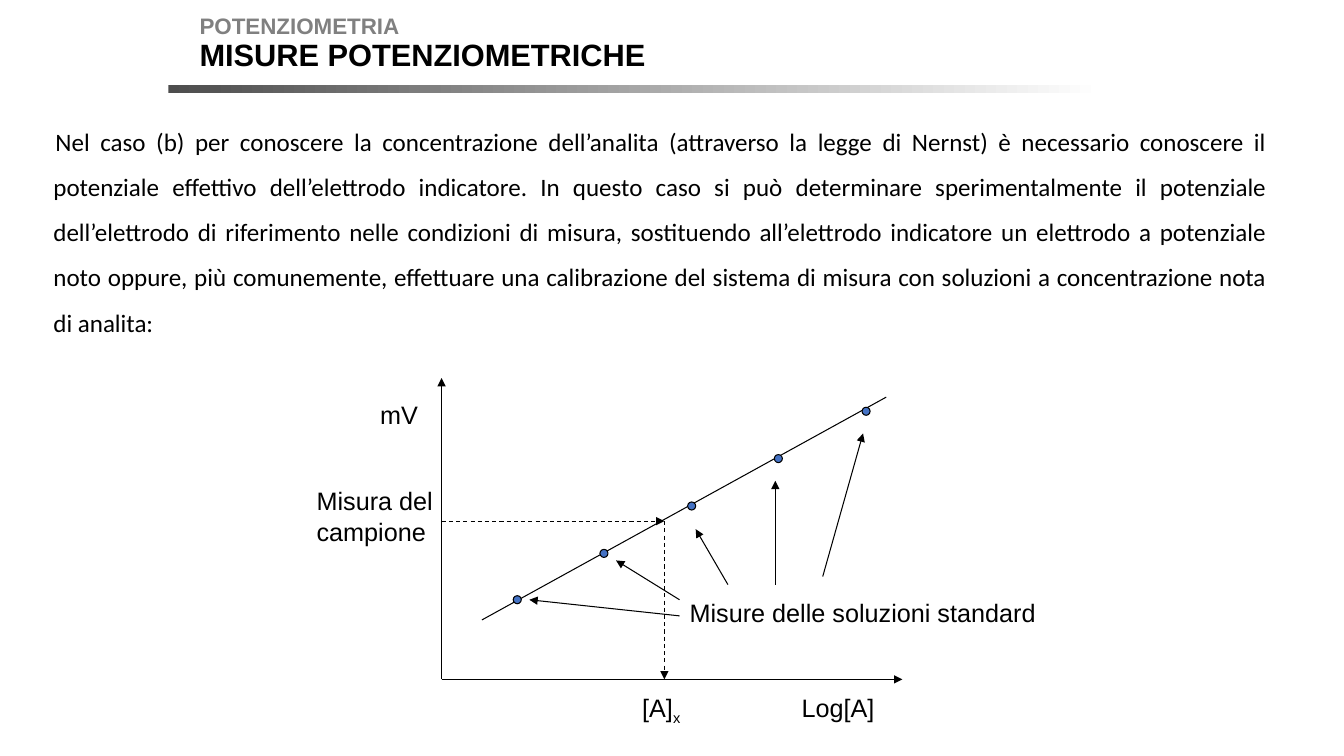
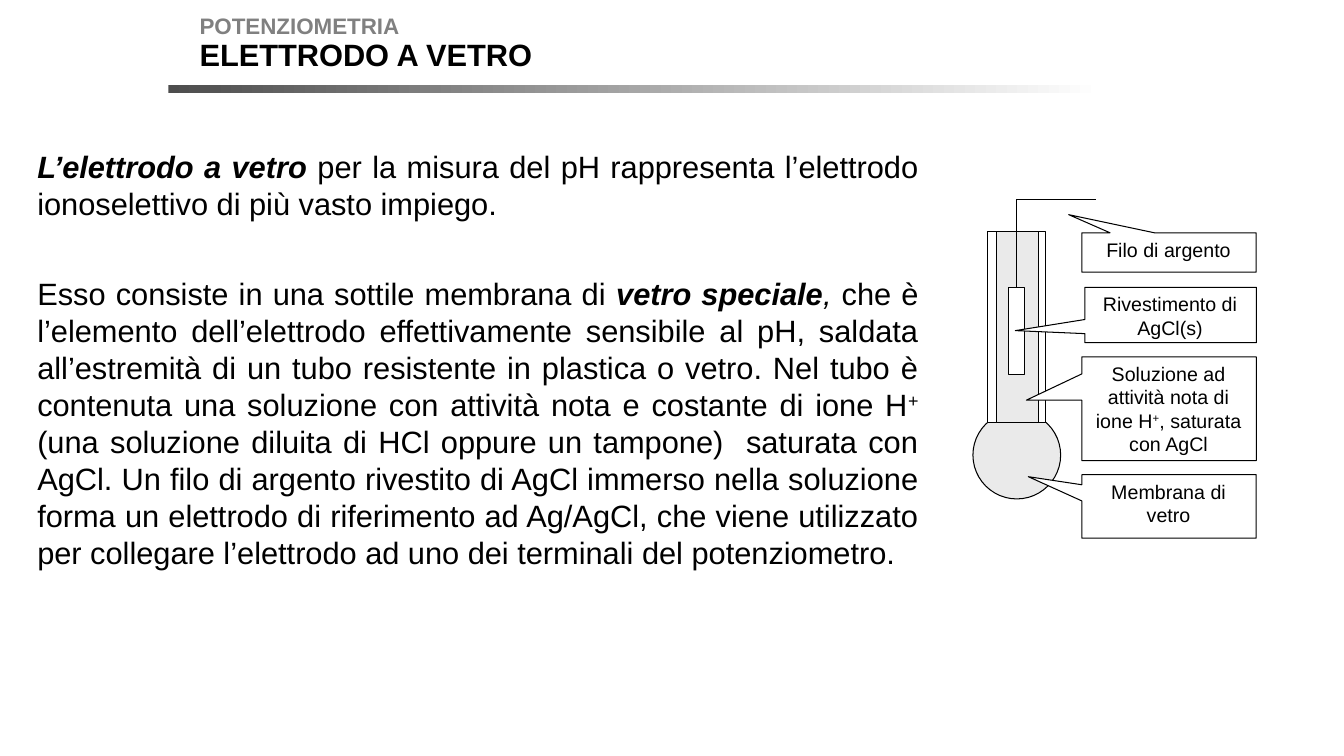
import pptx
import pptx.util
import pptx.dml.color
import pptx.enum.dml
import pptx.enum.shapes
import pptx.enum.text
import pptx.oxml
import pptx.oxml.ns

PX = 9144  # EMU per px, 100 px to the inch
BLACK, WHITE, GREY = "000000", "FFFFFF", "808080"
BAND_DARK, SOLUTION, DOT = "4D4D4D", "EAEAEA", "4472C4"
RECT = pptx.enum.shapes.MSO_SHAPE.RECTANGLE
OVAL = pptx.enum.shapes.MSO_SHAPE.OVAL
ALIGN = pptx.enum.text.PP_ALIGN
BASELINES = {"^": "30000", "_": "-25000"}


def emu(*lengths):
    return [round(n * PX) for n in lengths]


def rgb(value):
    return pptx.dml.color.RGBColor.from_string(value)


def outline(line):
    line.color.rgb = rgb(BLACK)
    line.width = pptx.util.Pt(0.75)


def paint(sp, fill):
    sp.shadow.inherit = False
    sp.fill.solid()
    sp.fill.fore_color.rgb = rgb(fill)
    outline(sp.line)


def shape(s, kind, x, y, w, h, fill):
    sp = s.shapes.add_shape(kind, *emu(x, y, w, h))
    paint(sp, fill)
    return sp


def line(s, x1, y1, x2, y2, arrow=False, dashed=False):
    straight = pptx.enum.shapes.MSO_CONNECTOR.STRAIGHT
    cn = s.shapes.add_connector(straight, *emu(x1, y1, x2, y2))
    outline(cn.line)
    if dashed:
        cn.line.dash_style = pptx.enum.dml.MSO_LINE.DASH
    if arrow:
        ln = cn.line._get_or_add_ln()
        tail = pptx.oxml.parse_xml(
            "<a:tailEnd %s type='triangle'/>" % pptx.oxml.ns.nsdecls("a"))
        ln.append(tail)
    cn._element.spPr.append(pptx.oxml.parse_xml(
        "<a:effectLst %s/>" % pptx.oxml.ns.nsdecls("a")))


def text(s, x, y, w, h, paragraphs, size, color=BLACK, font="Arial",
         align=ALIGN.LEFT, wrap=True):
    """Each paragraph is a list of (words, style); style mixes b, i, ^ and _."""
    tf = s.shapes.add_textbox(*emu(x, y, w, h)).text_frame
    tf.word_wrap = wrap
    tf.margin_left = tf.margin_right = tf.margin_top = tf.margin_bottom = 5 * PX
    for n, runs in enumerate(paragraphs):
        p = tf.add_paragraph() if n else tf.paragraphs[0]
        p.alignment = align
        for words, style in runs:
            r = p.add_run()
            r.text = words
            r.font.name = font
            r.font.size = pptx.util.Pt(size)
            r.font.color.rgb = rgb(color)
            r.font.bold = "b" in style
            r.font.italic = "i" in style
            for mark, baseline in BASELINES.items():
                if mark in style:
                    r._r.get_or_add_rPr().set("baseline", baseline)
    return tf


def label(s, x, y, w, h, *runs):
    text(s, x, y, w, h, [runs], 18, wrap=False)


def header(s, title, width):
    band = shape(s, RECT, 167, 84, 925, 8, BAND_DARK)
    band.line.fill.background()
    band.fill.gradient()
    band.fill.gradient_angle = 0
    for stop, color in zip(band.fill.gradient_stops, (BAND_DARK, WHITE)):
        stop.color.rgb = rgb(color)
        stop.position = 0 if color == BAND_DARK else 1
    text(s, 193, 7, 210, 34, [[("POTENZIOMETRIA", "b")]], 16, GREY, wrap=False)
    text(s, 193, 31, width, 45, [[(title, "b")]], 22, wrap=False)


def calibration_plot(s, x, y):
    """Calibration line with its axes; (x, y) is where the axes cross."""
    line(s, x, y, x + 457, y, arrow=True)
    line(s, x, y, x, y - 299, arrow=True)
    label(s, x - 66, y - 283, 49, 38, ("mV", ""))
    label(s, x + 352, y + 8, 84, 38, ("Log[A]", ""))

    line(s, x + 40, y - 59, x + 441, y - 280)
    for i in range(5):
        shape(s, OVAL, x + 71 + i * 173 // 2, y - 83 - i * 187 // 4, 8, 8, DOT)

    label(s, x + 241, y - 86, 355, 38, ("Misure delle soluzioni standard", ""))
    for x1, y1, x2, y2 in ((236, 63, 87, 79), (236, 79, 173, 118),
                           (284, 94, 252, 149), (331, 94, 331, 197),
                           (378, 102, 418, 244)):
        line(s, x + x1, y - y1, x + x2, y - y2, arrow=True)

    text(s, x - 129, y - 197, 162, 68, [[("Misura del campione", "")]], 18)
    sample_x, sample_y = x + 221, y - 157
    line(s, x, sample_y, sample_x, sample_y, arrow=True, dashed=True)
    line(s, sample_x, sample_y, sample_x, y, arrow=True, dashed=True)
    label(s, x + 194, y + 8, 50, 43, ("[A]", ""), ("x", "_"))


def callout(s, x, y, w, h, tail, runs, on_top=False):
    """Box whose tail, given relative to the box, leaves its left or top edge."""
    points = [(0, 0), (w, 0), (w, h), (0, h)]
    place = 1 if on_top else 4
    points[place:place] = tail
    points = [(x + dx, y + dy) for dx, dy in points]
    builder = s.shapes.build_freeform(*points[0], scale=PX)
    builder.add_line_segments(points[1:], close=True)
    paint(builder.convert_to_shape(), WHITE)
    text(s, x + 5, y, w - 11, h, [runs], 14, align=ALIGN.CENTER)


def glass_electrode(s, x, y):
    """Electrode with its callouts; (x, y) is the top left of the drawing."""
    shape(s, OVAL, x, y + 210, 87, 87, SOLUTION)
    shape(s, RECT, x + 14, y + 32, 58, 189, WHITE)
    shape(s, RECT, x + 23, y + 32, 42, 189, SOLUTION)
    line(s, x + 43, y, x + 43, y + 102)
    line(s, x + 43, y, x + 122, y)
    shape(s, RECT, x + 35, y + 87, 16, 87, WHITE)

    callout(s, x + 108, y + 33, 173, 39, [(28, 0), (-13, -18), (72, 0)],
            [("Filo di argento", "")], on_top=True)
    callout(s, x + 111, y + 87, 170, 55, [(0, 46), (-69, 43), (0, 32)],
            [("Rivestimento di AgCl(s)", "")])
    callout(s, x + 108, y + 156, 173, 103, [(0, 43), (-55, 43), (0, 17)],
            [("Soluzione ad attività nota di ione H", ""), ("+", "^"),
             (", saturata con AgCl", "")])
    callout(s, x + 108, y + 273, 173, 63, [(0, 26), (-53, 2), (0, 10)],
            [("Membrana di vetro", "")])


def measures_slide(s):
    header(s, "MISURE POTENZIOMETRICHE", 454)
    tf = text(s, 48, 106, 1214, 205, [[(
        "Nel caso (b) per conoscere la concentrazione dell’analita (attraverso "
        "la legge di Nernst) è necessario conoscere il potenziale effettivo "
        "dell’elettrodo indicatore. In questo caso si può determinare "
        "sperimentalmente il potenziale dell’elettrodo di riferimento nelle "
        "condizioni di misura, sostituendo all’elettrodo indicatore un "
        "elettrodo a potenziale noto oppure, più comunemente, effettuare una "
        "calibrazione del sistema di misura con soluzioni a concentrazione "
        "nota di analita:", "")]], 17.9, font="Calibri", align=ALIGN.JUSTIFY)
    p = tf.paragraphs[0]
    p.line_spacing = 1.5
    p.space_before = pptx.util.Pt(9)
    p._p.get_or_add_pPr().set("indent", str(2 * PX))
    calibration_plot(s, 438, 674)


def electrode_slide(s):
    tf = text(s, 32, 142, 884, 406, [
        [("L’elettrodo a vetro", "bi"),
         (" per la misura del pH rappresenta l’elettrodo ionoselettivo di più "
          "vasto impiego. ", "")],
        [("Esso consiste in una sottile membrana di ", ""),
         ("vetro speciale", "bi"), (",", "i"),
         (" che è l’elemento dell’elettrodo effettivamente sensibile al pH, "
          "saldata all’estremità di un tubo resistente in plastica o vetro. "
          "Nel tubo è contenuta una soluzione con attività nota e costante di "
          "ione H", ""), ("+", "^"),
         (" (una soluzione diluita di HCl oppure un tampone)  saturata con "
          "AgCl. Un filo di argento rivestito di AgCl immerso nella soluzione "
          "forma un elettrodo di riferimento ad Ag/AgCl, che viene utilizzato "
          "per collegare l’elettrodo ad uno dei terminali del "
          "potenziometro.", "")],
    ], 22, align=ALIGN.JUSTIFY)
    tf.paragraphs[1].space_before = pptx.util.Pt(38)
    glass_electrode(s, 965, 198)
    header(s, "ELETTRODO A VETRO", 342)


def main():
    prs = pptx.Presentation()
    prs.slide_width, prs.slide_height = emu(1333, 750)
    for build in (measures_slide, electrode_slide):
        build(prs.slides.add_slide(prs.slide_layouts[6]))
    prs.save("out.pptx")


if __name__ == "__main__":
    main()
